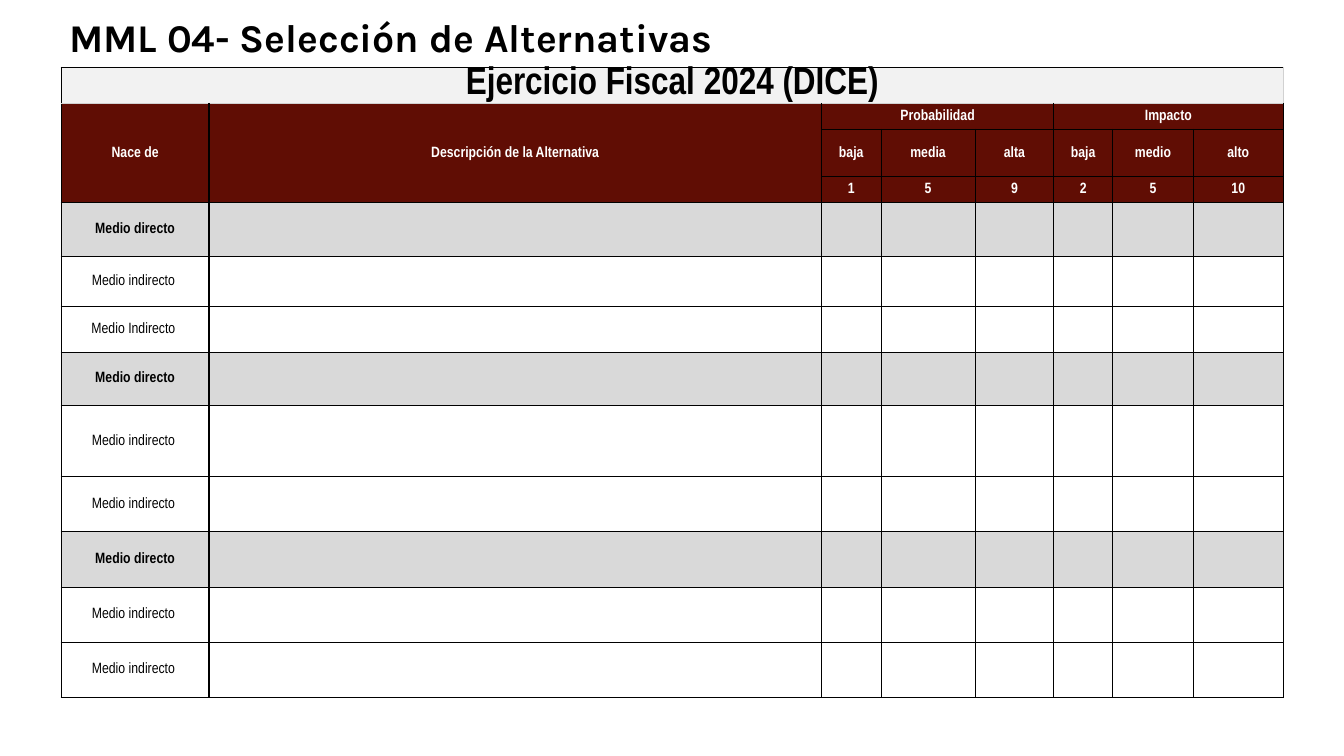
from lxml import etree
from pptx import Presentation
from pptx.dml.color import RGBColor
from pptx.enum.text import MSO_ANCHOR, MSO_AUTO_SIZE, PP_ALIGN
from pptx.oxml.ns import qn
from pptx.util import Inches, Pt

CENTER, LEFT = PP_ALIGN.CENTER, PP_ALIGN.LEFT
MIDDLE = MSO_ANCHOR.MIDDLE
NO_AUTOFIT = MSO_AUTO_SIZE.NONE

COLORS = {
    "black": "000000",
    "white": "FFFFFF",
    "maroon": "600D04",
    "grey": "D9D9D9",
    "pale": "F2F2F2",
    "rule": "D1D1D1",
}
THIN, THICK = 0.5, 1.5

COLUMN_WIDTHS = [1.92, 7.98, 0.77, 1.23, 1.02, 0.77, 1.05, 1.17]
ROW_HEIGHTS = [0.47, 0.33, 0.62, 0.33, 0.71, 0.65, 0.59, 0.7, 0.92] + [0.72] * 4
LAST_ROW, LAST_COLUMN = len(ROW_HEIGHTS) - 1, len(COLUMN_WIDTHS) - 1
HEADER_ROWS = range(1, 4)

# First and last cell of each merged area, as (row, column)
MERGES = [
    ((0, 0), (0, 7)),
    ((1, 0), (3, 0)),
    ((1, 1), (3, 1)),
    ((1, 2), (1, 4)),
    ((1, 5), (1, 7)),
]
TEXT_ROWS = [
    ["Ejercicio Fiscal 2024 (DICE)"],
    ["Nace de", "Descripción de la Alternativa", "Probabilidad", "", "", "Impacto"],
    ["", "", "baja", "media", "alta", "baja", "medio", "alto"],
    ["", "", "1", "5", "9", "2", "5", "10"],
    ["Medio directo"],
    ["Medio indirecto "],
    ["Medio Indirecto "],
    ["Medio directo"],
    ["Medio indirecto "],
    ["Medio indirecto "],
    ["Medio directo"],
    ["Medio indirecto "],
    ["Medio indirecto "],
]


def row_style(row):
    """Return the fill, text colour, size and weight of a table row."""
    if row == 0:
        return "pale", "black", 36, True
    if row in HEADER_ROWS:
        return "maroon", "white", 14, True
    if TEXT_ROWS[row][0] == "Medio directo":
        return "grey", "black", 14, True
    return "white", "black", 14, False


def cell_borders(row, column):
    """Return the (colour, width) of each side: thick outside and after column 0."""
    borders = {
        "lnL": ("black", THICK if column <= 1 else THIN),
        "lnR": ("black", THICK if column in (0, LAST_COLUMN) else THIN),
        "lnT": ("black", THICK if row == 0 else THIN),
        "lnB": ("black", THICK if row == LAST_ROW else THIN),
    }
    if row == 0:
        borders["lnR"] = borders["lnB"] = ("rule", THICK)
    elif row == 1:
        borders["lnT"] = ("rule", THICK)
    return borders


class SlideBuilder:
    def __init__(self, presentation):
        self.slide = presentation.slides.add_slide(presentation.slide_layouts[5])
        self.title_font, self.table_font = "Karla", "Arial Narrow"

    def format_paragraph(self, paragraph, font_name, size, color, bold, alignment):
        paragraph.alignment = alignment
        for run in paragraph.runs:
            run.font.name = font_name
            run.font.size = Pt(size)
            run.font.bold = bold
            run.font.color.rgb = RGBColor.from_string(COLORS[color])

    def add_title(self, text, left, top, width, height):
        title = self.slide.shapes.title
        title.left, title.top = Inches(left), Inches(top)
        title.width, title.height = Inches(width), Inches(height)
        text_frame = title.text_frame
        text_frame.text = text
        text_frame.word_wrap = True
        text_frame.auto_size = NO_AUTOFIT
        text_frame.vertical_anchor = MIDDLE
        paragraph = text_frame.paragraphs[0]
        paragraph.line_spacing = 0.9
        self.format_paragraph(paragraph, self.title_font, 36.8, "black", True, LEFT)

    def add_table(self, left, top):
        frame = self.slide.shapes.add_table(
            len(ROW_HEIGHTS), len(COLUMN_WIDTHS), Inches(left), Inches(top),
            Inches(sum(COLUMN_WIDTHS)), Inches(sum(ROW_HEIGHTS)))
        table = frame.table
        table.first_row = table.horz_banding = False
        for column, width in zip(table.columns, COLUMN_WIDTHS):
            column.width = Inches(width)
        for row, height in zip(table.rows, ROW_HEIGHTS):
            row.height = Inches(height)
        for first, last in MERGES:
            table.cell(*first).merge(table.cell(*last))
        for row, texts in enumerate(TEXT_ROWS):
            for column in range(len(COLUMN_WIDTHS)):
                text = texts[column] if column < len(texts) else ""
                self.format_cell(table.cell(row, column), row, column, text)

    def format_cell(self, cell, row, column, text):
        fill, color, size, bold = row_style(row)
        self.draw_borders(cell, cell_borders(row, column))
        cell.fill.solid()
        cell.fill.fore_color.rgb = RGBColor.from_string(COLORS[fill])
        if not text:
            return
        cell.margin_left = cell.margin_right = cell.margin_top = Inches(0.01)
        cell.margin_bottom = 0
        cell.vertical_anchor = MIDDLE
        cell.text_frame.text = text
        paragraph = cell.text_frame.paragraphs[0]
        if row == 0:
            paragraph.line_spacing = 0.82  # keeps the large heading inside its low row
        self.format_paragraph(paragraph, self.table_font, size, color, bold, CENTER)

    def draw_borders(self, cell, borders):
        properties = cell._tc.get_or_add_tcPr()
        for side, (color, width) in borders.items():
            line = etree.SubElement(properties, qn(f"a:{side}"), w=str(Pt(width)))
            solid_fill = etree.SubElement(line, qn("a:solidFill"))
            etree.SubElement(solid_fill, qn("a:srgbClr"), val=COLORS[color])


def main():
    presentation = Presentation()
    presentation.slide_width = Inches(17.5)
    presentation.slide_height = Inches(9.84)
    builder = SlideBuilder(presentation)
    builder.add_title("MML 04- Selección de Alternativas", 0.8, 0, 15.09, 1.03)
    builder.add_table(0.8, 0.88)
    presentation.save("out.pptx")


if __name__ == "__main__":
    main()
